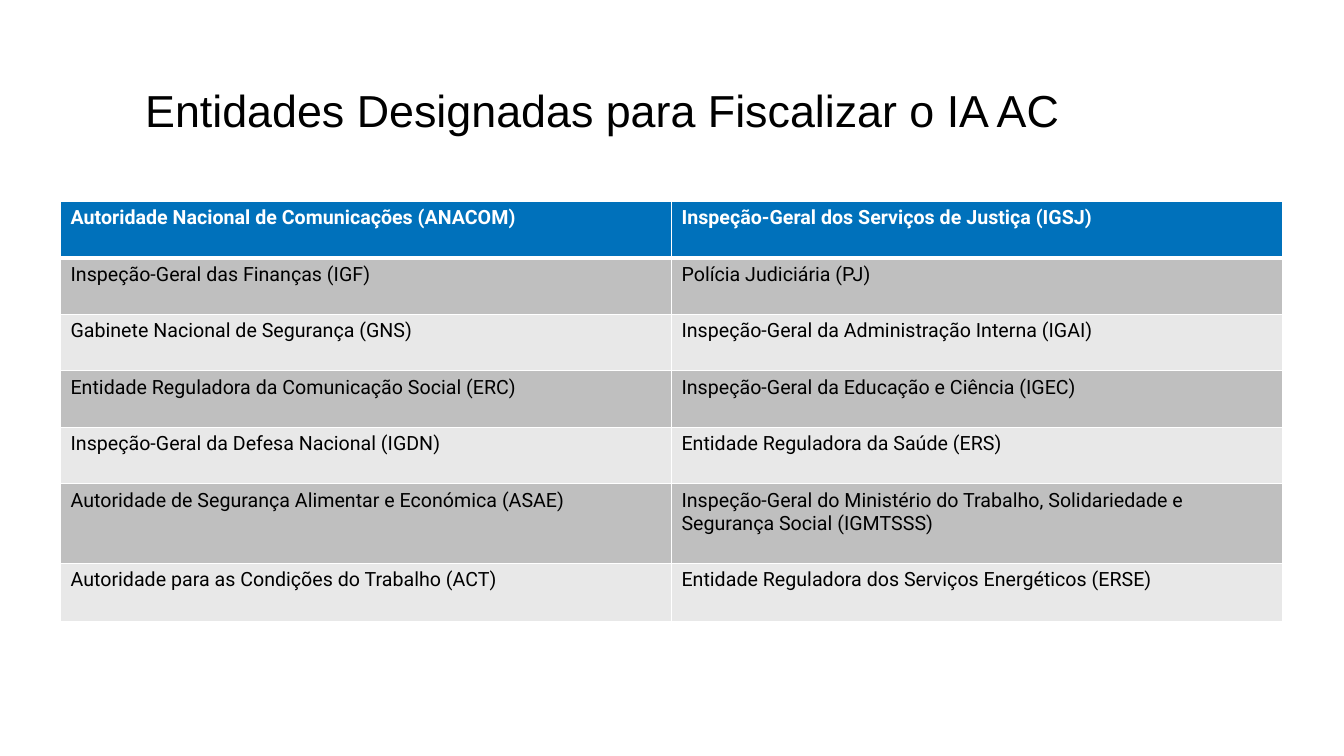
from dataclasses import dataclass

from lxml.etree import SubElement
from pptx import Presentation
from pptx.dml.color import RGBColor as RGB
from pptx.enum.text import MSO_ANCHOR as Anchor, PP_ALIGN as Align
from pptx.oxml.ns import qn
from pptx.util import Inches, Pt


@dataclass(frozen=True)
class Theme:
    title_font: str = "Arial"
    body_font: str = "Roboto"
    title_size: int = 32
    body_size: int = 14
    text: str = "000000"
    white: str = "FFFFFF"
    header: str = "0071BB"
    bands: tuple = ("BFBFBF", "E8E8E8")
    thin: int = 1
    thick: int = 3


TITLE = "Entidades Designadas para Fiscalizar o IA AC"
ENTITIES = [
    ("Autoridade Nacional de Comunicações (ANACOM)",
     "Inspeção-Geral dos Serviços de Justiça (IGSJ)"),
    ("Inspeção-Geral das Finanças (IGF)",
     "Polícia Judiciária (PJ)"),
    ("Gabinete Nacional de Segurança (GNS)",
     "Inspeção-Geral da Administração Interna (IGAI)"),
    ("Entidade Reguladora da Comunicação Social (ERC)",
     "Inspeção-Geral da Educação e Ciência (IGEC)"),
    ("Inspeção-Geral da Defesa Nacional (IGDN)",
     "Entidade Reguladora da Saúde (ERS)"),
    ("Autoridade de Segurança Alimentar e Económica (ASAE)",
     "Inspeção-Geral do Ministério do Trabalho, Solidariedade e "
     "Segurança Social (IGMTSSS)"),
    ("Autoridade para as Condições do Trabalho (ACT)",
     "Entidade Reguladora dos Serviços Energéticos (ERSE)"),
]
ROW_HEIGHTS = [0.56] * 5 + [0.79, 0.58]


def write(tf, text, *, font, size, color, bold=False, spacing=1.0):
    tf.word_wrap = True
    p = tf.paragraphs[0]
    p.alignment = Align.LEFT
    p.line_spacing = spacing
    r = p.add_run()
    r.text = text
    r.font.name = font
    r.font.size = Pt(size)
    r.font.bold = bold
    r.font.color.rgb = RGB.from_string(color)


class SlideBuilder:
    def __init__(self, prs, theme):
        self.theme = theme
        self.slide = prs.slides.add_slide(prs.slide_layouts[5])

    def title(self, text, left, top, width, height, indent):
        sp = self.slide.shapes.title
        sp.left, sp.top = Inches(left), Inches(top)
        sp.width, sp.height = Inches(width), Inches(height)
        tf = sp.text_frame
        tf.vertical_anchor = Anchor.MIDDLE
        tf.margin_left = Inches(indent)
        write(tf, text, font=self.theme.title_font, size=self.theme.title_size,
              color=self.theme.text, spacing=0.9)

    def borders(self, cell, **widths):
        tc_pr = cell._tc.get_or_add_tcPr()
        for side, width in widths.items():
            ln = SubElement(tc_pr, qn(f"a:ln{side}"), w=str(Pt(width)))
            fill = SubElement(ln, qn("a:solidFill"))
            SubElement(fill, qn("a:srgbClr"), val=self.theme.white)

    def table(self, rows, heights, left, top, width):
        th = self.theme
        frame = self.slide.shapes.add_table(
            len(rows), len(rows[0]), Inches(left), Inches(top),
            Inches(width), Inches(sum(heights)))
        table = frame.table
        for i, (row, height) in enumerate(zip(rows, heights)):
            table.rows[i].height = Inches(height)
            is_header = i == 0
            fill = th.header if is_header else th.bands[(i - 1) % 2]
            for j, text in enumerate(row):
                cell = table.cell(i, j)
                self.borders(cell, L=th.thin, R=th.thin,
                             T=th.thick if i == 1 else th.thin,
                             B=th.thick if is_header else th.thin)
                cell.fill.solid()
                cell.fill.fore_color.rgb = RGB.from_string(fill)
                write(cell.text_frame, text, font=th.body_font,
                      size=th.body_size, bold=is_header,
                      color=th.white if is_header else th.text)


def main():
    prs = Presentation()
    prs.slide_width, prs.slide_height = Inches(13.33), Inches(7.5)
    builder = SlideBuilder(prs, Theme())
    builder.title(TITLE, 0.71, 0.4, 10.58, 1.45, indent=0.73)
    builder.table(ENTITIES, ROW_HEIGHTS, 0.6, 2, 12.12)
    prs.save("out.pptx")


if __name__ == "__main__":
    main()
